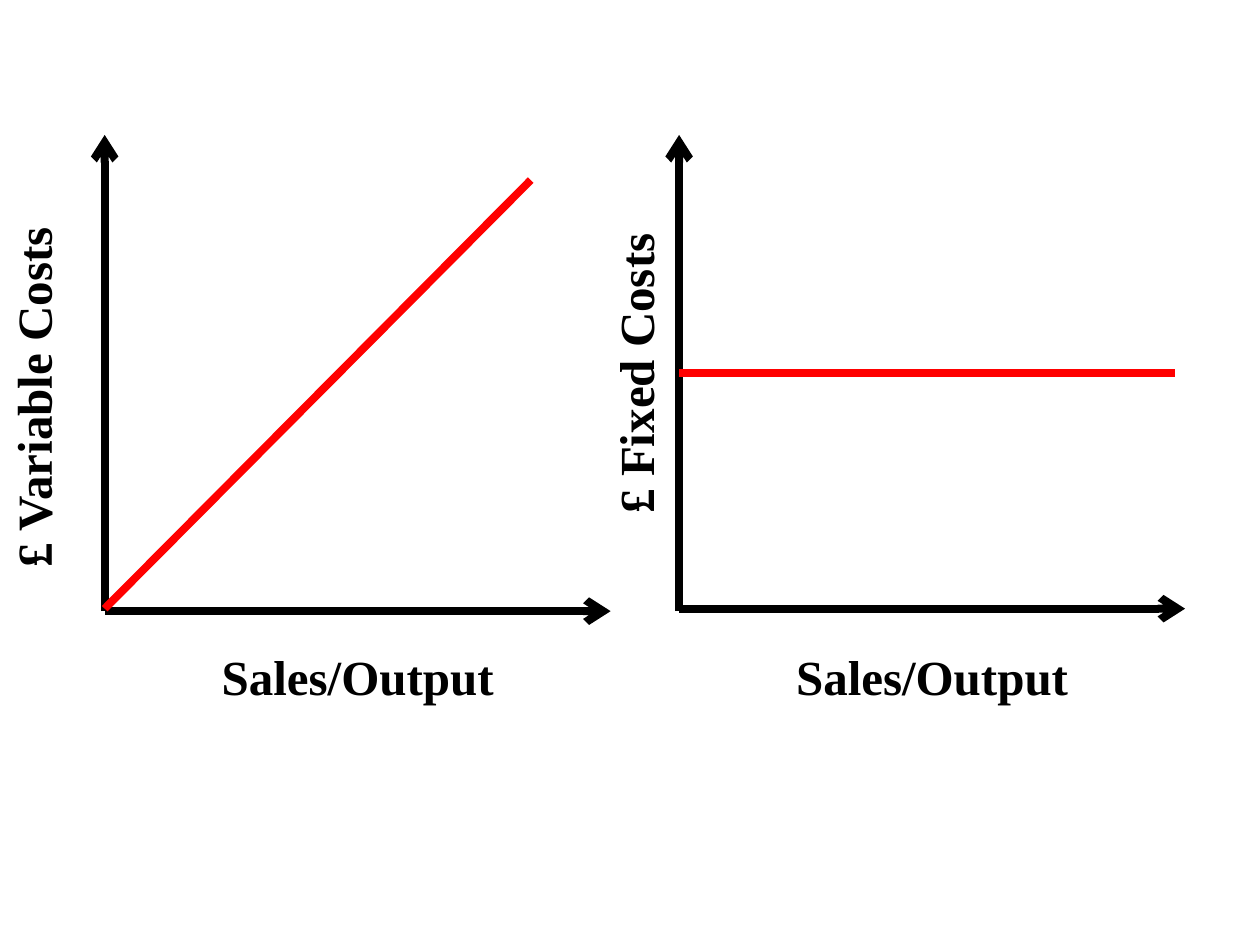
import pptx
import pptx.dml.color
import pptx.enum.shapes
import pptx.enum.text
import pptx.oxml
import pptx.oxml.ns
import pptx.util

Cm = pptx.util.Cm
NS = pptx.oxml.ns.nsdecls("a")


def tint(code):
    return pptx.dml.color.RGBColor.from_string(code)


def draw_line(slide, start, end, color, arrow=False):
    kind = pptx.enum.shapes.MSO_CONNECTOR.STRAIGHT
    line = slide.shapes.add_connector(kind, *map(Cm, start + end))
    line.line.color.rgb = tint(color)
    line.line.width = pptx.util.Pt(4.5)
    if arrow:
        tip = pptx.oxml.parse_xml(f'<a:tailEnd {NS} type="arrow"/>')
        line.line._get_or_add_ln().append(tip)
    line._element.spPr.append(pptx.oxml.parse_xml(f"<a:effectLst {NS}/>"))


def add_label(slide, text, mid, turn=0):
    width, height = 7.8, 1.0
    x, y = mid
    box = slide.shapes.add_textbox(
        Cm(x - width / 2), Cm(y - height / 2), Cm(width), Cm(height))
    box.rotation = turn
    frame = box.text_frame
    frame.word_wrap = True
    frame.margin_left = frame.margin_right = 0
    frame.margin_top = frame.margin_bottom = 0
    frame.vertical_anchor = pptx.enum.text.MSO_ANCHOR.MIDDLE
    para = frame.paragraphs[0]
    para.text = text
    para.alignment = pptx.enum.text.PP_ALIGN.CENTER
    para.font.name = "Times New Roman"
    para.font.size = pptx.util.Pt(28)
    para.font.bold = True
    para.font.color.rgb = tint("000000")


def draw_graph(slide, box, title, side, base, start, end):
    left, top, width, height = box

    def place(point):
        return left + point[0], top + point[1]

    draw_line(slide, place((0, height)), place((0, 0)), "000000", True)
    draw_line(slide, place((0, base)), place((width, base)), "000000", True)
    add_label(slide, "Sales/Output", place((width / 2, height + 1.3)))
    add_label(slide, title, place(side), 270)
    draw_line(slide, place(start), place(end), "FF0000")


def main():
    deck = pptx.Presentation()
    deck.slide_width, deck.slide_height = Cm(25.4), Cm(19.05)
    slide = deck.slides.add_slide(deck.slide_layouts[6])
    top, width, height = 2.72, 10.2, 9.6
    draw_graph(slide, (2.11, top, width, height), "£ Variable Costs",
               (-1.46, 5.29), height, (0, 9.55), (8.59, 0.91))
    draw_graph(slide, (13.69, top, width, height), "£ Fixed Costs",
               (-0.9, 4.81), 9.55, (0, height / 2), (10, height / 2))
    deck.save("out.pptx")


if __name__ == "__main__":
    main()
